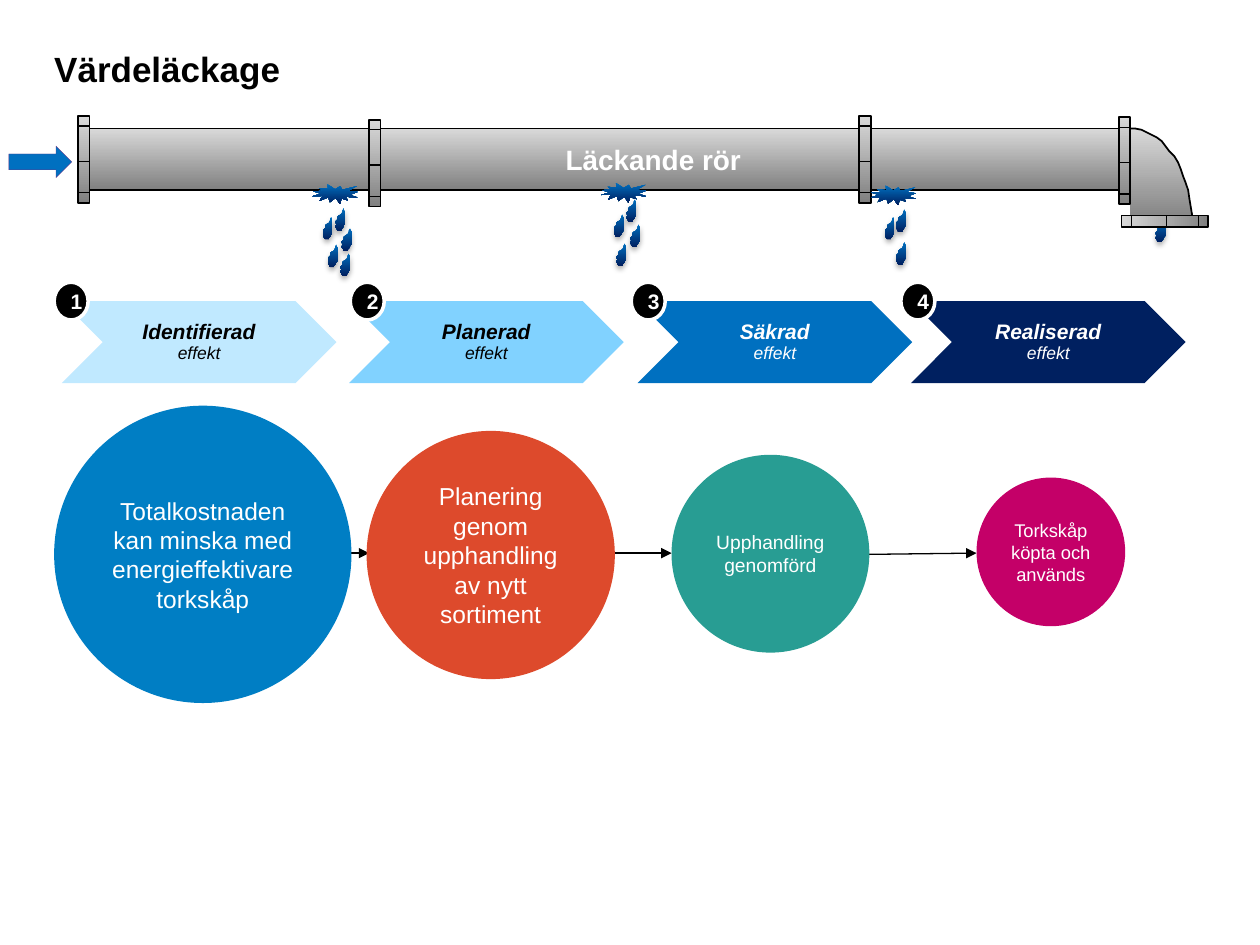
import math
from lxml import etree
from pptx import Presentation
from pptx.dml.color import RGBColor
from pptx.enum import shapes, text
from pptx.oxml.ns import qn
from pptx.util import Inches, Pt

# Content
FONT = "Arial"
COLORS = {
    "black": "000000", "white": "FFFFFF", "blue": "0070C0", "navy": "002060",
    "sky": "81D2FF", "pale": "C0E9FF", "ocean": "007EC4", "red": "DD4A2C",
    "teal": "289D93", "pink": "C40068", "light": "D9D9D9", "dark": "808080",
    "purple": "683788",
}
METAL = ("light", "dark")
WATER = ("blue", "navy")
TITLE = "Värdeläckage"
PIPE_LABEL = "Läckande rör"

# Steps: chevron left, badge left, heading, fill, text colour
STEPS = [
    (0.49, 0.43, "Identifierad", "pale", "black"),
    (2.77, 2.78, "Planerad", "sky", "black"),
    (5.06, 5.01, "Säkrad", "blue", "white"),
    (7.23, 7.15, "Realiserad", "navy", "white"),
]
# Circles: left, top, diameter, text, size, fill
CIRCLES = [
    (0.43, 3.22, 2.36, "Totalkostnaden kan minska med energieffektivare torkskåp", 14, "ocean"),
    (5.33, 3.61, 1.57, "Upphandling genomförd", 11, "teal"),
    (2.91, 3.42, 1.97, "Planering genom upphandling av nytt sortiment", 14, "red"),
    (7.75, 3.79, 1.18, "Torkskåp köpta och används", 10.5, "pink"),
]
ARROWS = [(2.66, 4.39, 2.93, 4.39), (4.87, 4.39, 5.33, 4.39), (6.87, 4.4, 7.75, 4.39)]
FLANGES = [(8.88, 0.93), (2.93, 0.95), (0.62, 0.92), (6.82, 0.92)]
FLANGE_W, FLANGE_H = 0.09, 0.69
SEAMS = (0.08, 0.36, 0.61)
SPLASHES = [(2.48, 1.46), (6.91, 1.47), (4.77, 1.45)]
ELBOW_DROP = (9.17, 1.74)
DROPS = [
    (2.56, 1.72), (2.6, 1.94), (2.71, 1.81), (2.66, 1.65), (2.7, 2.01),
    (4.87, 1.7), (4.89, 1.93), (4.97, 1.58), (5, 1.78),
    (7.02, 1.72), (7.11, 1.92), (7.11, 1.66),
]
# Drop outline in hundredths of an inch
DROP = [
    (7, 0), (6, 2), (6, 3), (5, 5), (3, 6), (2, 7), (2, 9), (1, 10), (0, 11),
    (1, 13), (0, 15), (1, 16), (2, 18), (3, 18), (5, 18), (5, 17), (6, 16),
    (7, 14), (8, 13), (8, 11), (8, 8), (8, 5), (8, 3), (7, 1),
]

prs = Presentation()
prs.slide_width, prs.slide_height = Inches(10), Inches(7.5)
s = prs.slides.add_slide(prs.slide_layouts[5])
SHAPE = shapes.MSO_SHAPE


def rgb(name):
    return RGBColor.from_string(COLORS[name])


def paint(sp, fill=None, line=None, width=1):
    """Fill is a colour name, a (top, bottom) pair or None."""
    sp.shadow.inherit = False
    if fill is None:
        sp.fill.background()
    elif isinstance(fill, tuple):
        sp.fill.gradient()
        sp.fill.gradient_angle = 270
        for stop, name in zip(sp.fill.gradient_stops, fill):
            stop.color.rgb = rgb(name)
    else:
        sp.fill.solid()
        sp.fill.fore_color.rgb = rgb(fill)
    if line:
        sp.line.color.rgb = rgb(line)
        sp.line.width = Pt(width)
    else:
        sp.line.fill.background()
    return sp


def add_shape(kind, x, y, w, h, *style):
    return paint(s.shapes.add_shape(kind, *map(Inches, (x, y, w, h))), *style)


def add_outline(points, x, y, closed, *style):
    fb = s.shapes.build_freeform(*points[0], scale=Inches(0.01))
    fb.add_line_segments(points[1:], close=closed)
    return paint(fb.convert_to_shape(Inches(x), Inches(y)), *style)


def add_line(x1, y1, x2, y2, arrow=False):
    ln = s.shapes.add_connector(shapes.MSO_CONNECTOR.STRAIGHT, *map(Inches, (x1, y1, x2, y2)))
    ln.line.color.rgb = rgb("black")
    ln.line.width = Pt(0.75)
    if arrow:
        etree.SubElement(ln.line._get_or_add_ln(), qn("a:tailEnd"), type="triangle")
    etree.SubElement(ln._element.spPr, qn("a:effectLst"))


def write(p, words, size, color, bold=False, italic=False, align=text.PP_ALIGN.CENTER):
    p.alignment = align
    r = p.add_run()
    r.text = words
    f = r.font
    f.name, f.size, f.bold, f.italic = FONT, Pt(size), bold, italic
    f.color.rgb = rgb(color)


def add_drop(x, y):
    sp = add_outline(DROP, x, y, True, WATER)
    effects = sp._element.spPr.find(qn("a:effectLst"))
    shadow = etree.SubElement(effects, qn("a:outerShdw"), blurRad=str(Pt(3.1)),
                              dist=str(Pt(1.8)), dir="5400000", rotWithShape="0")
    color = etree.SubElement(shadow, qn("a:srgbClr"), val=COLORS["black"])
    etree.SubElement(color, qn("a:alpha"), val="35000")


# Title
title = s.shapes.title
title.left, title.top, title.width, title.height = map(Inches, (0.43, 0.33, 9.14, 0.82))
tf = title.text_frame
tf.margin_left = 0
tf.auto_size = text.MSO_AUTO_SIZE.NONE
tf.vertical_anchor = text.MSO_ANCHOR.TOP
write(tf.paragraphs[0], TITLE, 20, "black", True, align=text.PP_ALIGN.LEFT)

# Circles and the arrows behind them
for ends in ARROWS:
    add_line(*ends, arrow=True)
for x, y, d, words, size, fill in CIRCLES:
    tf = add_shape(SHAPE.FLOWCHART_CONNECTOR, x, y, d, d, fill).text_frame
    tf.margin_left = tf.margin_right = Inches(0.08)
    tf.vertical_anchor = text.MSO_ANCHOR.MIDDLE
    write(tf.paragraphs[0], words, size, "white")

# Chevrons, then numbered badges
for x, _, heading, fill, color in STEPS:
    tf = add_shape(SHAPE.CHEVRON, x, 2.39, 2.18, 0.65, fill).text_frame
    tf.vertical_anchor = text.MSO_ANCHOR.MIDDLE
    write(tf.paragraphs[0], heading, 12, color, True, True)
    write(tf.add_paragraph(), "effekt", 10, color, False, True)
    for p in tf.paragraphs:
        p.line_spacing = 0.9
for number, step in enumerate(STEPS, 1):
    tf = add_shape(SHAPE.OVAL, step[1], 2.24, 0.27, 0.3, "black", "white", 2).text_frame
    tf.vertical_anchor = text.MSO_ANCHOR.MIDDLE
    write(tf.paragraphs[0], str(number), 12, "white", True)

# Elbow: quarter ellipse, outlined along the curve only
angles = [math.radians(a) for a in range(90, -1, -5)]
curve = [(49 * math.cos(a), 75 - 75 * math.sin(a)) for a in angles]
add_outline(curve + [(0, 75)], 8.97, 1.02, True, METAL)
add_outline(curve, 8.97, 1.02, False, None, "black")

# Inflow arrow, pipe and label
add_shape(SHAPE.RIGHT_ARROW, 0.07, 1.16, 0.5, 0.25, "blue", "purple", 0.25)
add_drop(*ELBOW_DROP)
add_shape(SHAPE.RECTANGLE, 0.7, 1.02, 8.19, 0.49, METAL, "black")
tf = s.shapes.add_textbox(*map(Inches, (4.39, 1.08, 1.61, 0.37))).text_frame
tf.word_wrap = False
tf.auto_size = text.MSO_AUTO_SIZE.SHAPE_TO_FIT_TEXT
write(tf.paragraphs[0], PIPE_LABEL, 16, "white", True, align=text.PP_ALIGN.LEFT)

# Flanges with seams; the outlet flange lies on its side
for x, y in FLANGES:
    add_shape(SHAPE.RECTANGLE, x, y, FLANGE_W, FLANGE_H, METAL, "black")
    for dy in SEAMS:
        add_line(x, y + dy, x + FLANGE_W, y + dy)
outlet = add_shape(SHAPE.RECTANGLE, 9.2, 1.41, FLANGE_W, FLANGE_H, METAL, "black")
outlet.rotation = 270
for dx in SEAMS:
    add_line(8.9 + dx, 1.8, 8.9 + dx, 1.71)

# Leaks
for x, y in SPLASHES:
    splash = add_shape(SHAPE.EXPLOSION1, x, y, 0.36, 0.16, WATER)
    splash._element.spPr.find(qn("a:xfrm")).set("flipH", "1")
for x, y in DROPS:
    add_drop(x, y)

prs.save("out.pptx")
